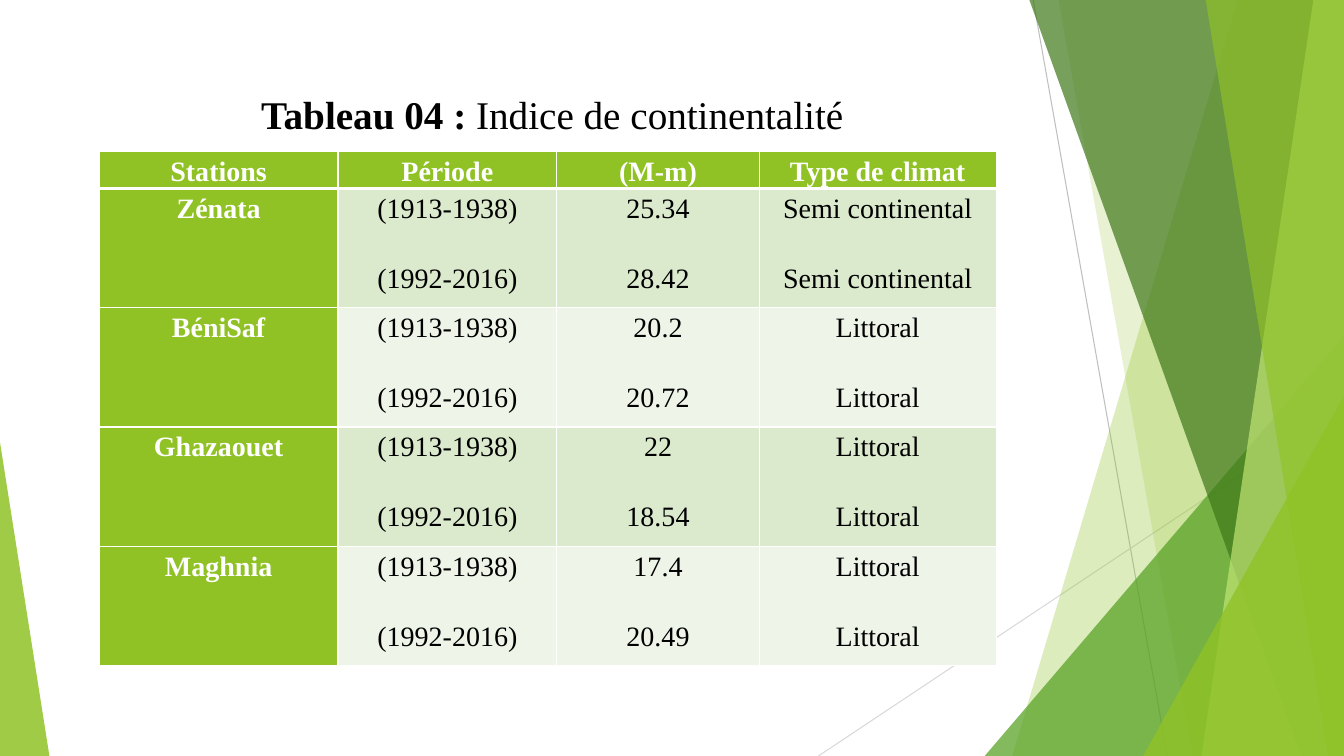
from dataclasses import dataclass

from lxml import etree
from pptx import Presentation
from pptx import util as u
from pptx.dml.color import RGBColor
from pptx.enum import shapes, text
from pptx.oxml import ns


@dataclass(frozen=True)
class Theme:
    """Colours, font and type sizes of the slide."""
    font: str = "Times New Roman"
    title_size: float = 28
    table_size: float = 20
    line_spacing: float = 1.15
    lime: str = "90C226"
    leaf: str = "54A021"
    forest: str = "3F7819"
    pale_lime: str = "C0E474"
    band_dark: str = "DBE9CD"
    band_light: str = "EEF4E8"
    grey: str = "BFBFBF"
    pale_grey: str = "D9D9D9"
    white: str = "FFFFFF"
    black: str = "000000"


def apply(target, formats):
    """Set every attribute named in formats on target."""
    for name, value in formats.items():
        setattr(target, name, value)


def child(parent, tag, **attributes):
    """Append an XML element to parent and return it."""
    return etree.SubElement(parent, ns.qn(tag), **attributes)


class SlideBuilder:
    """Draws styled elements on the current slide, in points."""

    def __init__(self, slide, theme):
        """Keep the slide and its theme."""
        self.slide = slide
        self.theme = theme

    def line(self, start, end, color):
        """Draw a thin straight line."""
        ray = self.slide.shapes.add_connector(
            shapes.MSO_CONNECTOR.STRAIGHT, *map(u.Pt, start + end))
        ray.line.width = u.Pt(0.75)
        ray.line.color.rgb = RGBColor.from_string(color)
        child(ray._element.spPr, "a:effectLst")

    def paint(self, facet, color, opacity):
        """Give a facet a translucent fill without outline or shadow."""
        facet.shadow.inherit = False
        facet.line.fill.background()
        facet.fill.solid()
        facet.fill.fore_color.rgb = RGBColor.from_string(color)
        tint = facet._element.spPr.find(".//" + ns.qn("a:srgbClr"))
        child(tint, "a:alpha", val=str(opacity * 1000))

    def polygon(self, corners, color, opacity):
        """Draw a closed translucent polygon."""
        first, *others = [tuple(map(u.Pt, corner)) for corner in corners]
        outline = self.slide.shapes.build_freeform(*first, scale=1.0)
        outline.add_line_segments(others, close=True)
        self.paint(outline.convert_to_shape(), color, opacity)

    def triangle(self, box, apex, color, opacity):
        """Draw a translucent triangle with its apex at a share of the width."""
        facet = self.slide.shapes.add_shape(
            shapes.MSO_SHAPE.ISOSCELES_TRIANGLE, *map(u.Pt, box))
        facet.adjustments[0] = apex
        self.paint(facet, color, opacity)

    def typeset(self, paragraph, runs, size, color, **spacing):
        """Set centred runs, given as (wording, bold) pairs."""
        apply(paragraph, {"alignment": text.PP_ALIGN.CENTER,
                          "line_spacing": self.theme.line_spacing, **spacing})
        for wording, bold in runs:
            run = paragraph.add_run()
            run.text = wording
            apply(run.font, {"name": self.theme.font, "size": u.Pt(size), "bold": bold})
            run.font.color.rgb = RGBColor.from_string(color)

    def title(self, box, runs):
        """Add the title text."""
        frame = self.slide.shapes.add_textbox(*map(u.Pt, box)).text_frame
        apply(frame, {"word_wrap": True,
                      "auto_size": text.MSO_AUTO_SIZE.SHAPE_TO_FIT_TEXT})
        self.typeset(frame.paragraphs[0], runs, self.theme.title_size,
                     self.theme.black, space_after=u.Pt(10))

    def borders(self, cell, widths):
        """Draw white cell borders from a dict of side and width."""
        properties = cell._tc.get_or_add_tcPr()
        for side, width in widths.items():
            edge = child(properties, "a:ln" + side, w=str(u.Pt(width)))
            child(child(edge, "a:solidFill"), "a:srgbClr", val=self.theme.white)

    def cell(self, cell, wordings, fill, color, bold, widths):
        """Fill one cell, with a blank line's gap between its values."""
        apply(cell, {"margin_left": u.Pt(5), "margin_right": u.Pt(5),
                     "margin_top": 0, "margin_bottom": 0})
        self.borders(cell, widths)
        cell.fill.solid()
        cell.fill.fore_color.rgb = RGBColor.from_string(fill)
        frame = cell.text_frame
        for order, wording in enumerate(wordings):
            paragraph = frame.add_paragraph() if order else frame.paragraphs[0]
            self.typeset(paragraph, [(wording, bold)], self.theme.table_size, color,
                         space_before=u.Pt(24.5 if order else 0))

    def table(self, left, top, widths, heights, rows):
        """Add the table with a header row, a header column and bands."""
        theme = self.theme
        grid = self.slide.shapes.add_table(
            len(rows), len(widths), u.Pt(left), u.Pt(top),
            u.Pt(sum(widths)), u.Pt(sum(heights))).table
        for column, width in zip(grid.columns, widths):
            column.width = u.Pt(width)
        for r, (row, height) in enumerate(zip(rows, heights)):
            grid.rows[r].height = u.Pt(height)
            band = theme.band_dark if r % 2 else theme.band_light
            edges = {"L": 1, "R": 1, "T": 3 if r == 1 else 1, "B": 1 if r else 3}
            for c, wordings in enumerate(row):
                heading = r == 0 or c == 0
                self.cell(grid.cell(r, c), wordings,
                          theme.lime if heading else band,
                          theme.white if heading else theme.black, heading, edges)


WIDTH, HEIGHT = 960, 540
HEADINGS = ["Stations", "Période", "(M-m)", "Type de climat"]
PERIODS = ["(1913-1938)", "(1992-2016)"]
STATIONS = [
    ("Zénata", ["25.34", "28.42"], "Semi continental"),
    ("BéniSaf", ["20.2", "20.72"], "Littoral"),
    ("Ghazaouet", ["22", "18.54"], "Littoral"),
    ("Maghnia", ["17.4", "20.49"], "Littoral"),
]


def main():
    """Build the continentality slide."""
    deck = Presentation()
    apply(deck, {"slide_width": u.Pt(WIDTH), "slide_height": u.Pt(HEIGHT)})
    theme = Theme()
    page = SlideBuilder(deck.slides.add_slide(deck.slide_layouts[6]), theme)

    page.line((738, 0), (833.8, HEIGHT), theme.grey)
    page.line((WIDTH, 290.2), (584.6, HEIGHT), theme.pale_grey)

    def shard(top_x, bottom_x, color, opacity):
        """Draw a facet from a slanted edge to the right side of the slide."""
        page.polygon([(top_x, -0.6), (WIDTH, -0.6), (WIDTH, HEIGHT),
                      (bottom_x, HEIGHT)], color, opacity)

    shard(884.2, 723, theme.lime, 30)
    shard(756, 851.8, theme.lime, 20)
    page.triangle((703.4, 239.8, 256.6, 300.2), 1, theme.leaf, 72)
    shard(735.1, 929.5, theme.forest, 70)
    shard(938.2, 858.2, theme.pale_lime, 70)
    shard(861.1, 949, theme.lime, 65)
    page.triangle((816.5, 283, 143.5, 257), 1, theme.lime, 80)
    page.triangle((0, 316, 35.3, 224), 0, theme.lime, 85)

    rows = [[[heading] for heading in HEADINGS]]
    rows += [[[station], PERIODS, ranges, [climate] * len(PERIODS)]
             for station, ranges, climate in STATIONS]
    page.table(70.9, 108.3, [170.6, 156.2, 144.7, 169.2],
               [26.4] + [85.2] * len(STATIONS), rows)
    page.title((166.3, 56.2, 456.5, 43.9),
               [("Tableau 04 : ", True), ("Indice de continentalité", False)])
    deck.save("out.pptx")


if __name__ == "__main__":
    main()
